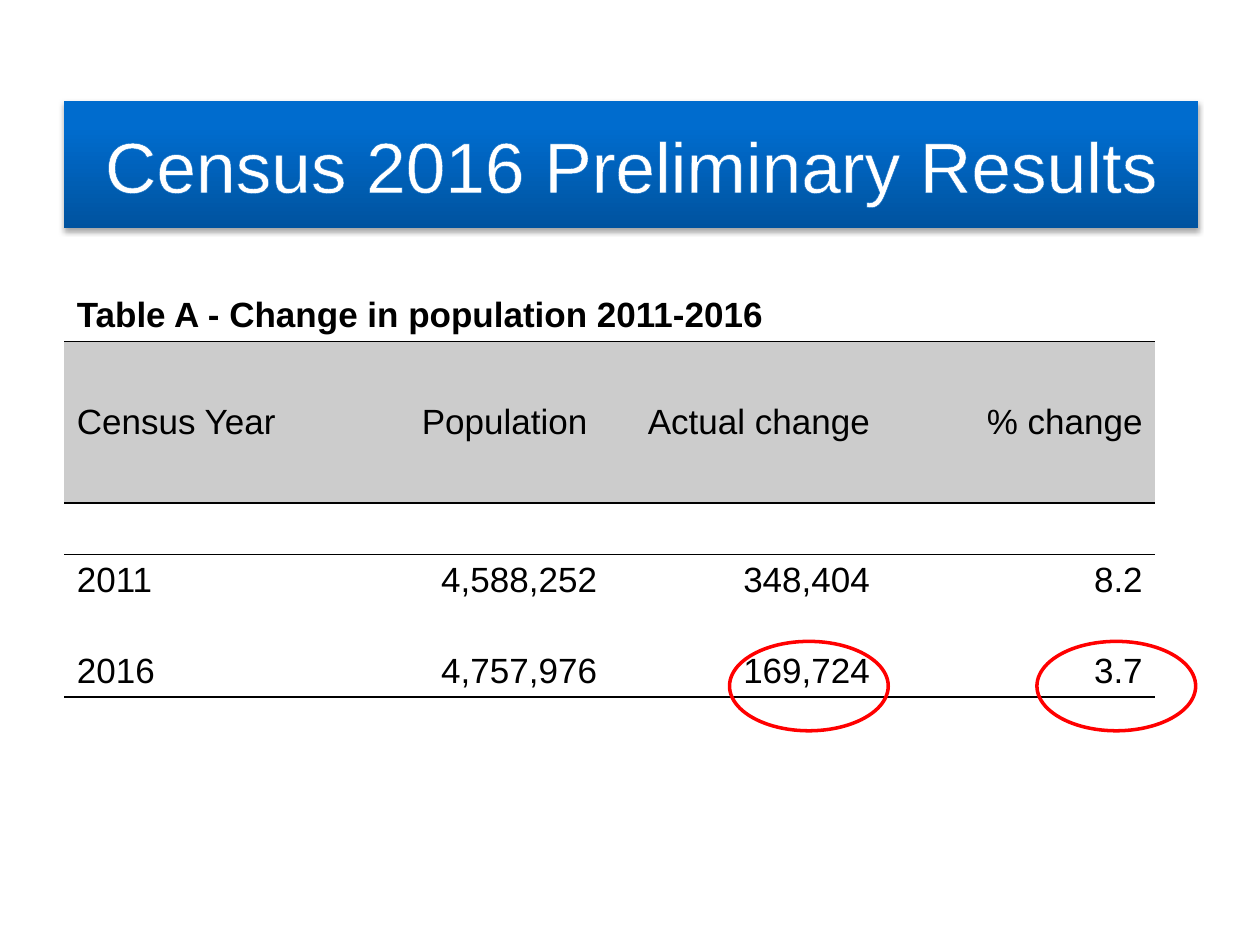
from lxml import etree
from pptx import Presentation
from pptx.dml.color import RGBColor
from pptx.enum.shapes import MSO_SHAPE
from pptx.enum.text import MSO_ANCHOR, PP_ALIGN
from pptx.oxml import parse_xml
from pptx.oxml.ns import nsdecls, qn
from pptx.util import Inches, Pt

OVAL = MSO_SHAPE.OVAL
MIDDLE, BOTTOM = MSO_ANCHOR.MIDDLE, MSO_ANCHOR.BOTTOM
LEFT, CENTER, RIGHT = PP_ALIGN.LEFT, PP_ALIGN.CENTER, PP_ALIGN.RIGHT
BLACK = RGBColor(0x00, 0x00, 0x00)
WHITE = RGBColor(0xFF, 0xFF, 0xFF)
GREY = RGBColor(0xCC, 0xCC, 0xCC)
RED = RGBColor(0xFF, 0x00, 0x00)
DARK = RGBColor(0x00, 0x53, 0x9F)
BLUE = RGBColor(0x00, 0x6C, 0xCE)
LIGHT = RGBColor(0x00, 0x6D, 0xCF)
EDGE = RGBColor(0x0F, 0x6F, 0xC6)
PLAIN = "{2D5ABB26-0587-4C30-8999-92F81FD0307C}"


def add_line(parent, tag, color, width):
    line = etree.SubElement(parent, qn(tag), w=str(Pt(width)))
    fill = etree.SubElement(line, qn("a:solidFill"))
    etree.SubElement(fill, qn("a:srgbClr"), val=str(color))


def style(para, size, color, align, bold=False):
    para.alignment = align
    font = para.font
    font.name, font.size, font.bold = "Arial", Pt(size), bold
    font.color.rgb = color


prs = Presentation()
prs.slide_width, prs.slide_height = Inches(10), Inches(7.5)
slide = prs.slides.add_slide(prs.slide_layouts[5])

title = slide.shapes.title
title.left, title.top = Inches(0.51), Inches(0.8)
title.width, title.height = Inches(9), Inches(1.01)
stops = "".join(
    f'<a:gs pos="{pos * 1000}"><a:srgbClr val="{color}"/></a:gs>'
    for pos, color in ((0, DARK), (80, BLUE), (100, LIGHT))
)
props = title.element.spPr
props.append(parse_xml(
    f'<a:gradFill {nsdecls("a")} rotWithShape="1"><a:gsLst>{stops}</a:gsLst>'
    '<a:lin ang="16200000" scaled="0"/></a:gradFill>'
))
props.append(parse_xml(
    f'<a:effectLst {nsdecls("a")}><a:outerShdw blurRad="{Pt(3.1)}" dist="{Pt(1.8)}" '
    f'dir="5400000" rotWithShape="0"><a:srgbClr val="{BLACK}">'
    '<a:alpha val="35000"/></a:srgbClr></a:outerShdw></a:effectLst>'
))
frame = title.text_frame
frame.text = "Census 2016 Preliminary Results"
frame.vertical_anchor = MIDDLE
head = frame.paragraphs[0]
indent = head._p.get_or_add_pPr()
indent.set("marL", str(Inches(0.5)))
indent.set("indent", str(Inches(-0.5)))
style(head, 40.7, WHITE, CENTER)
add_line(head.runs[0]._r.get_or_add_rPr(), "a:ln", EDGE, 0.75)

rows = (
    ("Table A - Change in population 2011-2016", "", "", ""),
    ("Census Year", "Population ", "Actual change", "% change"),
    ("", "", "", ""),
    ("2011", "4,588,252", "348,404", "8.2"),
    ("2016", "4,757,976", "169,724", "3.7"),
)
heights = (0.41, 1.28, 0.41, 0.41, 0.72)
edges = {0: ["a:lnB"], 1: ["a:lnT", "a:lnB"], 2: ["a:lnT"], 4: ["a:lnB"]}

holder = slide.shapes.add_table(
    5, 4, Inches(0.51), Inches(2.3), Inches(8.66), Inches(sum(heights))
)
table = holder.table
table.first_row = table.horz_banding = False
table._tbl.tblPr.find(qn("a:tableStyleId")).text = PLAIN
table.cell(0, 0).merge(table.cell(0, 3))

for r, texts in enumerate(rows):
    table.rows[r].height = Inches(heights[r])
    for c, text in enumerate(texts):
        cell = table.cell(r, c)
        cell.vertical_anchor = MIDDLE if r == 1 else BOTTOM
        for tag in edges.get(r, []):
            add_line(cell._tc.get_or_add_tcPr(), tag, BLACK, 1)
        if r == 1:
            cell.fill.solid()
            cell.fill.fore_color.rgb = GREY
        else:
            cell.fill.background()
        if text:
            cell.text = text
            style(cell.text_frame.paragraphs[0], 20, BLACK, RIGHT if c else LEFT, r == 0)

for left in (5.79, 8.23):
    ring = slide.shapes.add_shape(
        OVAL, Inches(left), Inches(5.09), Inches(1.26), Inches(0.71)
    )
    ring.shadow.inherit = False
    ring.fill.background()
    ring.line.color.rgb = RED
    ring.line.width = Pt(2)

prs.save("out.pptx")
